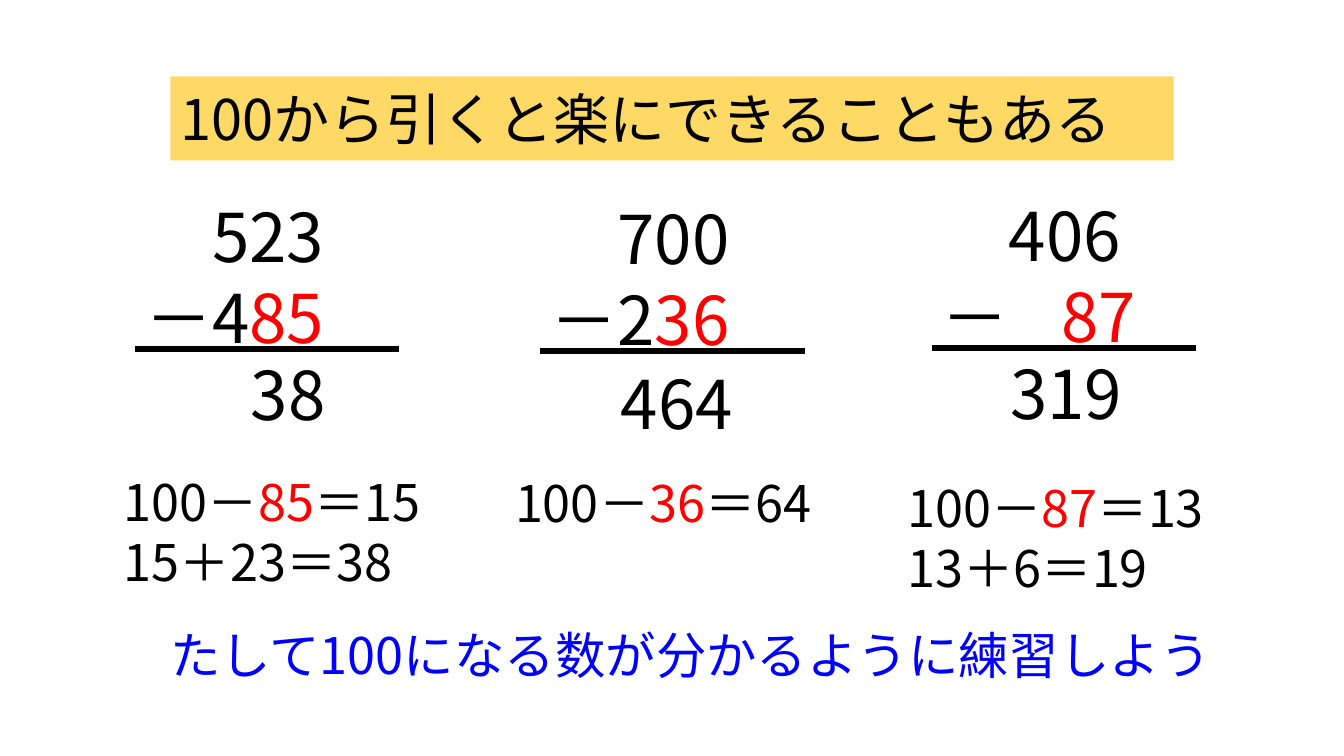
import pptx
import pptx.dml.color
import pptx.enum.shapes
import pptx.enum.text
import pptx.util
from lxml import etree
from pptx.util import Inches

BLACK, RED, BLUE, YELLOW = "000000", "FF0000", "0000FF", "FFD966"
FONT = "Noto Sans CJK JP"
DRAWING = "{http://schemas.openxmlformats.org/drawingml/2006/main}"


def colour(code):
    return pptx.dml.color.RGBColor.from_string(code)


class Slide:
    """Holds the text style and the current page."""

    def __init__(self, deck, font):
        self.page = deck.slides.add_slide(deck.slide_layouts[5])
        self.font = font

    def fill_text(self, frame, lines, size, ink, wrap=True):
        """Each line is a list of (text, colour) spans; None means ink."""
        frame.word_wrap = wrap
        frame.auto_size = pptx.enum.text.MSO_AUTO_SIZE.SHAPE_TO_FIT_TEXT
        for number, line in enumerate(lines):
            para = frame.add_paragraph() if number else frame.paragraphs[0]
            para.alignment = pptx.enum.text.PP_ALIGN.LEFT
            para.line_spacing = 1.0
            para.space_before = pptx.util.Pt(0)
            para.font.size = pptx.util.Pt(size)
            para.font.name = self.font
            para.font.color.rgb = colour(ink)
            east_asian = etree.Element(DRAWING + "ea", typeface=self.font)
            para.font._element.find(DRAWING + "latin").addnext(east_asian)
            for text, tint in line:
                span = para.add_run()
                span.text = text
                if tint:
                    span.font.color.rgb = colour(tint)

    def title(self, text, left, top, width, height):
        box = self.page.shapes.title
        box.left, box.top = Inches(left), Inches(top)
        box.width, box.height = Inches(width), Inches(height)
        box.fill.solid()
        box.fill.fore_color.rgb = colour(YELLOW)
        box.text_frame.vertical_anchor = pptx.enum.text.MSO_ANCHOR.MIDDLE
        self.fill_text(box.text_frame, [[(text, None)]], 40, BLACK)

    def text(self, lines, left, top, width, height, size, ink=BLACK, wrap=True, parent=None):
        shapes = (parent or self.page).shapes
        box = shapes.add_textbox(Inches(left), Inches(top), Inches(width), Inches(height))
        self.fill_text(box.text_frame, lines, size, ink, wrap)
        return box

    def rule(self, left, top, width, parent):
        line = parent.shapes.add_connector(
            pptx.enum.shapes.MSO_CONNECTOR.STRAIGHT,
            Inches(left), Inches(top), Inches(left + width), Inches(top))
        line.line.color.rgb = colour(BLACK)
        line.line.width = pptx.util.Pt(4.5)
        etree.SubElement(line._element.spPr, DRAWING + "effectLst")

    def tab_stop(self, para, position):
        stops = etree.Element(DRAWING + "tabLst")
        etree.SubElement(stops, DRAWING + "tab", pos=str(Inches(position)), algn="l")
        para.font._element.addprevious(stops)

    def subtraction(self, left, top, minuend, head, tail, answer, answer_left, answer_top):
        """A column subtraction; tail is the red part of the number taken away."""
        group = self.page.shapes.add_group_shape()
        lines = [[("　" + minuend, None)], [("－" + head, None), (tail, RED)]]
        box = self.text(lines, left, top, 2.61, 1.72, 48, parent=group)
        if head == "\t":
            self.tab_stop(box.text_frame.paragraphs[1], 1.19)
        self.rule(left, top + 1.57, 2.62, group)
        self.text([[(answer, None)]], answer_left, answer_top, 1.57, 0.91, 48, parent=group)

    def hint(self, left, top, taken, rest, *more):
        """The way through 100, then any further sums."""
        lines = [[("100－", None), (taken, RED), ("＝" + rest, None)]]
        lines += [[(line, None)] for line in more]
        self.text(lines, left, top, 3.72, 0.11 + 0.6 * len(lines), 36, wrap=False)


def main():
    deck = pptx.Presentation()
    deck.slide_width, deck.slide_height = Inches(13.33), Inches(7.5)
    slide = Slide(deck, FONT)

    # Heading
    slide.title("100から引くと楽にできることもある", 1.69, 0.79, 9.95, 0.77)

    # Column subtractions
    slide.subtraction(1.34, 1.89, "523", "4", "85", "38", 2.39, 3.46)
    slide.subtraction(5.36, 1.91, "700", "2", "36", "464", 6.06, 3.55)
    slide.subtraction(9.24, 1.88, "406", "\t", "87", "319", 9.92, 3.45)

    # Ways through 100
    slide.hint(1.13, 4.62, "85", "15", "15＋23＝38")
    slide.hint(5.01, 4.63, "36", "64")
    slide.hint(8.9, 4.68, "87", "13", "13＋6＝19")

    # Closing advice
    advice = "たして100になる数が分かるように練習しよう"
    slide.text([[(advice, None)]], 1.59, 6.14, 10.85, 0.71, 36, BLUE)

    deck.save("out.pptx")


if __name__ == "__main__":
    main()
